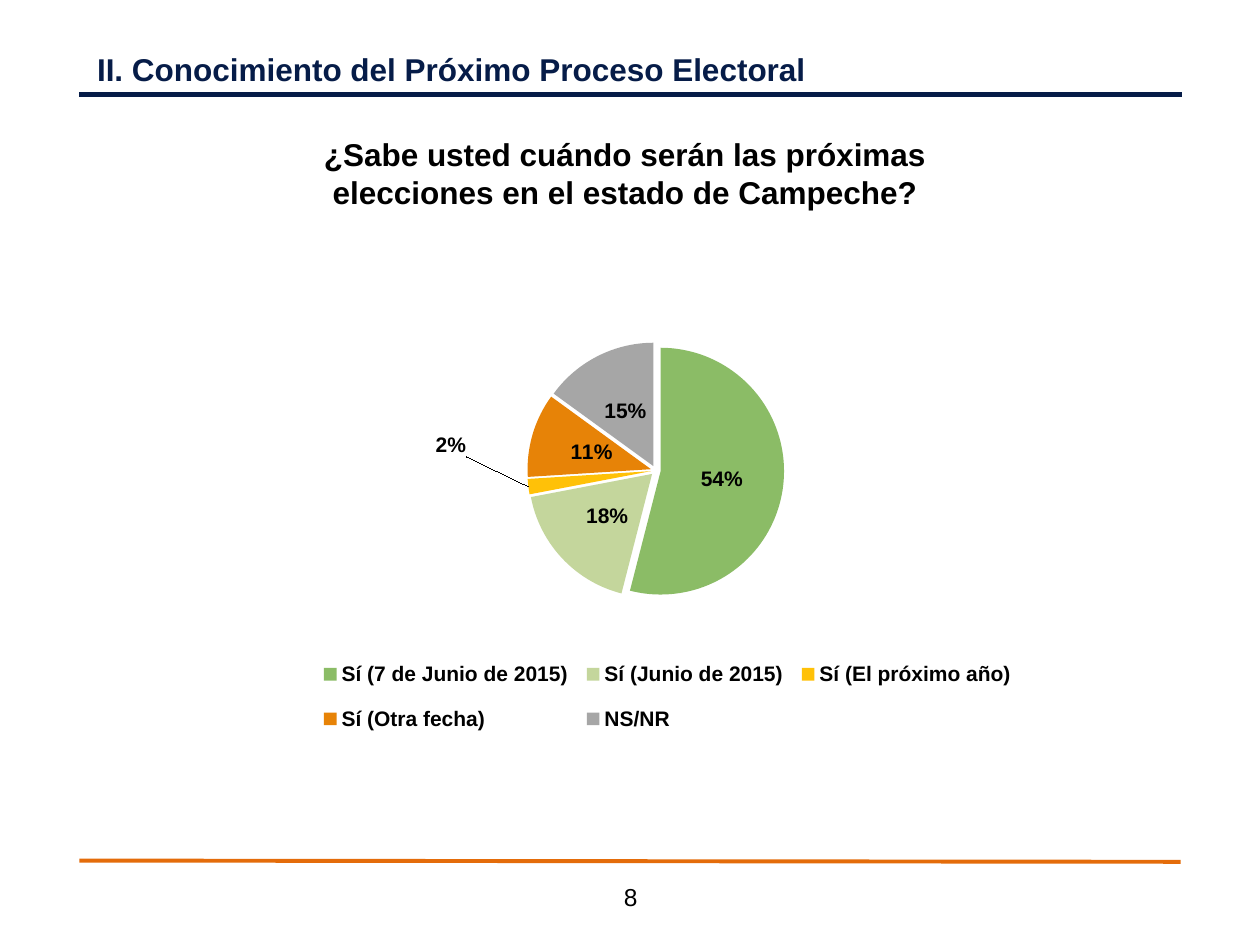
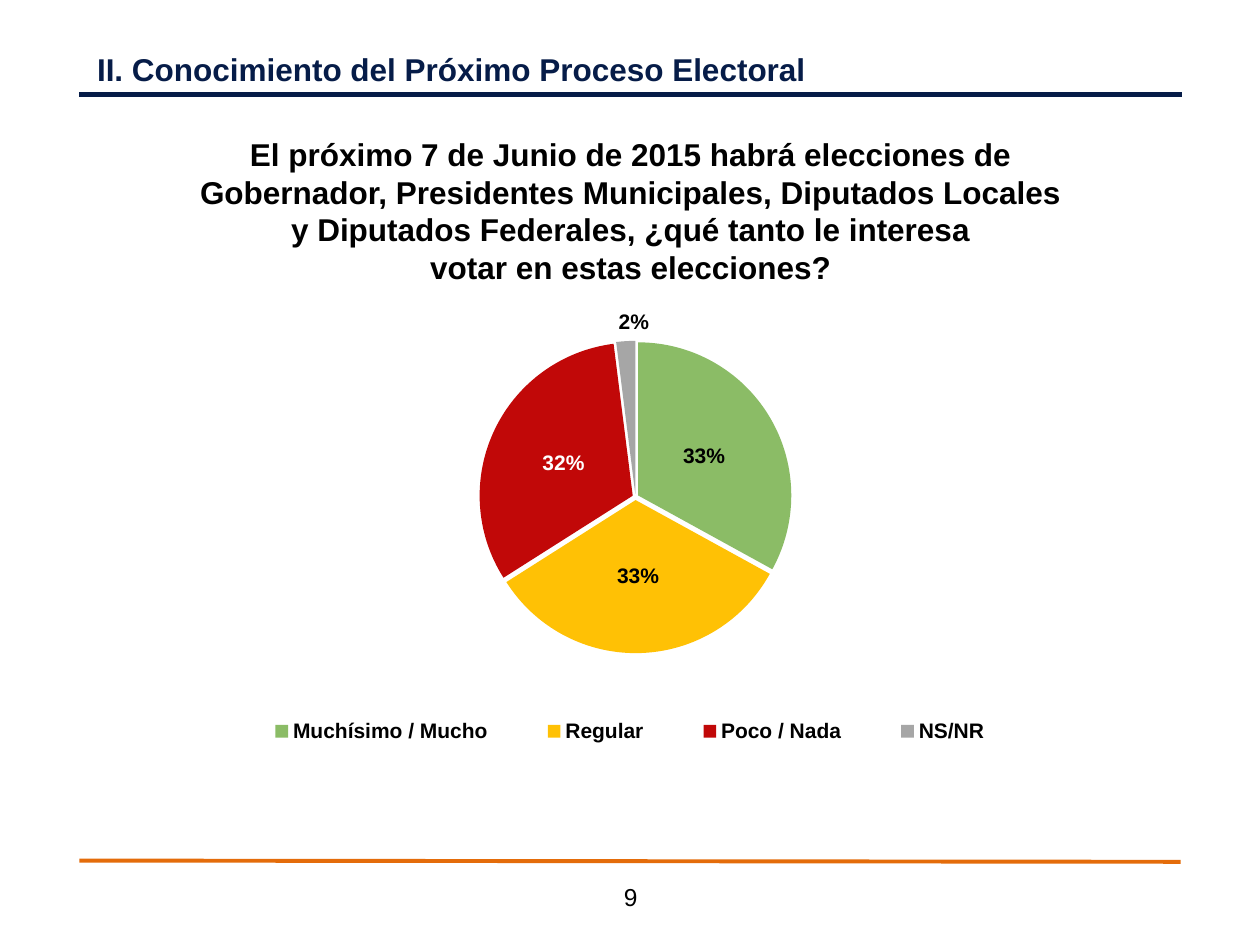
from pptx import Presentation
from pptx.chart.data import CategoryChartData
from pptx.dml.color import RGBColor
from pptx.enum.chart import XL_CHART_TYPE, XL_LABEL_POSITION, XL_LEGEND_POSITION
from pptx.enum.shapes import MSO_CONNECTOR
from pptx.enum.text import MSO_ANCHOR, MSO_AUTO_SIZE, PP_ALIGN
from pptx.oxml import parse_xml
from pptx.oxml.ns import nsdecls, qn
from pptx.util import Pt

PIE = XL_CHART_TYPE.PIE
LABEL_CENTER, LABEL_OUTSIDE = XL_LABEL_POSITION.CENTER, XL_LABEL_POSITION.OUTSIDE_END
LEGEND_BOTTOM = XL_LEGEND_POSITION.BOTTOM
STRAIGHT = MSO_CONNECTOR.STRAIGHT
TOP = MSO_ANCHOR.TOP
FIXED = MSO_AUTO_SIZE.NONE
LEFT, CENTER = PP_ALIGN.LEFT, PP_ALIGN.CENTER

PX = 9144  # EMU per px, 100 px to the inch
FONT = "Arial"
NAVY, ORANGE, BLACK, WHITE = "061C48", "E46C0A", "000000", "FFFFFF"
GREEN, LIME, YELLOW, AMBER = "88BA62", "C3D69B", "FFC000", "E78307"
RED, GRAY = "C00000", "A6A6A6"

HEADING = "II. Conocimiento del Próximo Proceso Electoral"
RULES = [((63, 75, 938, 75), NAVY, 3), ((63, 683, 937, 684), ORANGE, 2.25)]
PLOT_AREA = {"x": 0.268, "y": 0.155, "w": 0.477, "h": 0.46}

# Slices: category, value, colour, opacity in percent
# Special labels: slice index -> colour, position, shift from the usual place
PAGES = [
    {
        "number": "8",
        "question": ["¿Sabe usted cuándo serán las próximas",
                     "elecciones en el estado de Campeche?"],
        "question_box": (39, 102, 914, 71),
        "chart_box": (172, 203, 688, 443),
        "slices": [("Sí (7 de Junio de 2015)", 0.54, GREEN, 97),
                   ("Sí (Junio de 2015)", 0.18, LIME, 98),
                   ("Sí (El próximo año)", 0.02, YELLOW, 97),
                   ("Sí (Otra fecha)", 0.11, AMBER, 100),
                   ("NS/NR", 0.15, GRAY, 100)],
        "explosion": 4,
        "legend": {"x": 0.11, "y": 0.69, "w": 0.82, "h": 0.2},
        "special_labels": {2: (BLACK, LABEL_CENTER, {"x": -0.16, "y": -0.06})},
    },
    {
        "number": "9",
        "question": ["El próximo 7 de Junio de 2015 habrá elecciones de",
                     "Gobernador, Presidentes Municipales, Diputados Locales",
                     "y Diputados Federales, ¿qué tanto le interesa",
                     "votar en estas elecciones?"],
        "question_box": (75, 102, 851, 131),
        "chart_box": (156, 187, 688, 539),
        "slices": [("Muchísimo / Mucho", 0.33, GREEN, 97),
                   ("Regular", 0.33, YELLOW, 98),
                   ("Poco / Nada", 0.32, RED, 97),
                   ("NS/NR", 0.02, GRAY, 100)],
        "explosion": 2,
        "legend": {"x": 0.03, "y": 0.68, "w": 0.94, "h": 0.1},
        "special_labels": {2: (WHITE, LABEL_CENTER, None),
                           3: (BLACK, LABEL_OUTSIDE, {"x": 0.01, "y": 0})},
    },
]


def style_font(font, size, color, bold):
    font.name, font.size, font.bold = FONT, Pt(size), bold
    font.color.rgb = RGBColor.from_string(color)


def place_chart_part(part, index, modes, sizes):
    for old in part.findall(qn("c:layout")):
        part.remove(old)
    values = "".join(f'<c:{key} val="{value}"/>' for key, value in sizes.items())
    part.insert(index, parse_xml(
        f'<c:layout {nsdecls("c")}><c:manualLayout>{modes}{values}'
        "</c:manualLayout></c:layout>"))


EDGE = '<c:xMode val="edge"/><c:yMode val="edge"/>'

deck = Presentation()
deck.slide_width, deck.slide_height = 1000 * PX, 750 * PX

for content in PAGES:
    page = deck.slides.add_slide(deck.slide_layouts[5])

    # Header and footer rules
    for ends, color, width in RULES:
        rule = page.shapes.add_connector(STRAIGHT, *[end * PX for end in ends])
        rule.line.color.rgb = RGBColor.from_string(color)
        rule.line.width = Pt(width)
        rule._element.spPr.append(parse_xml(f'<a:effectLst {nsdecls("a")}/>'))

    # Heading, question and page number
    question = page.shapes.add_textbox(0, 0, PX, PX)
    number = page.shapes.add_textbox(0, 0, PX, PX)
    texts = [
        (page.shapes.title, (67, 35, 929, 40), [HEADING], 18, NAVY, True, LEFT),
        (question, content["question_box"], content["question"], 18, BLACK, True, CENTER),
        (number, (434, 695, 133, 34), [content["number"]], 14, BLACK, False, CENTER),
    ]
    for box, place, lines, size, color, bold, align in texts:
        box.left, box.top, box.width, box.height = [length * PX for length in place]
        frame = box.text_frame
        frame.word_wrap, frame.auto_size, frame.vertical_anchor = True, FIXED, TOP
        for position, line in enumerate(lines):
            para = frame.add_paragraph() if position else frame.paragraphs[0]
            para.alignment = align
            span = para.add_run()
            span.text = line
            style_font(span.font, size, color, bold)

    # Pie chart
    names, values, colors, opacities = zip(*content["slices"])
    data = CategoryChartData(number_format="0%")
    data.categories = names
    data.add_series("Series 1", values)
    chart_place = [length * PX for length in content["chart_box"]]
    chart = page.shapes.add_chart(PIE, *chart_place, data).chart
    chart.has_title = False
    style_font(chart.font, 12, BLACK, True)
    place_chart_part(chart._chartSpace.chart.plotArea, 0,
                     '<c:layoutTarget val="inner"/>' + EDGE, PLOT_AREA)

    # Legend
    chart.has_legend = True
    chart.legend.position = LEGEND_BOTTOM
    chart.legend.include_in_layout = False
    style_font(chart.legend.font, 12, BLACK, True)
    place_chart_part(chart.legend._element, 1, EDGE, content["legend"])

    # Slices, slightly pulled apart
    plot = chart.plots[0]
    plot.vary_by_categories = True
    series = plot.series[0]
    for index, (color, opacity) in enumerate(zip(colors, opacities)):
        fill = series.points[index].format.fill
        fill.solid()
        fill.fore_color.rgb = RGBColor.from_string(color)
        if opacity < 100:
            tint = series.points[index].format._element.find(".//" + qn("a:srgbClr")) \
                if hasattr(series.points[index].format, "_element") \
                else series._element.findall(qn("c:dPt"))[index].find(".//" + qn("a:srgbClr"))
            tint.append(parse_xml(f'<a:alpha {nsdecls("a")} val="{opacity * 1000}"/>'))
    series._element.find(qn("c:dPt")).addprevious(parse_xml(
        f'<c:explosion {nsdecls("c")} val="{content["explosion"]}"/>'))

    # Value labels
    labels = series.data_labels
    labels.show_value = True
    labels.number_format, labels.number_format_is_linked = "0%", False
    labels.position = LABEL_CENTER
    style_font(labels.font, 12, BLACK, True)
    for index, (color, position, shift) in content["special_labels"].items():
        label = series.points[index].data_label
        style_font(label.font, 12, color, True)
        label.position = position
        if shift:
            place_chart_part(labels._element.findall(qn("c:dLbl"))[-1], 1, "", shift)

deck.save("out.pptx")
